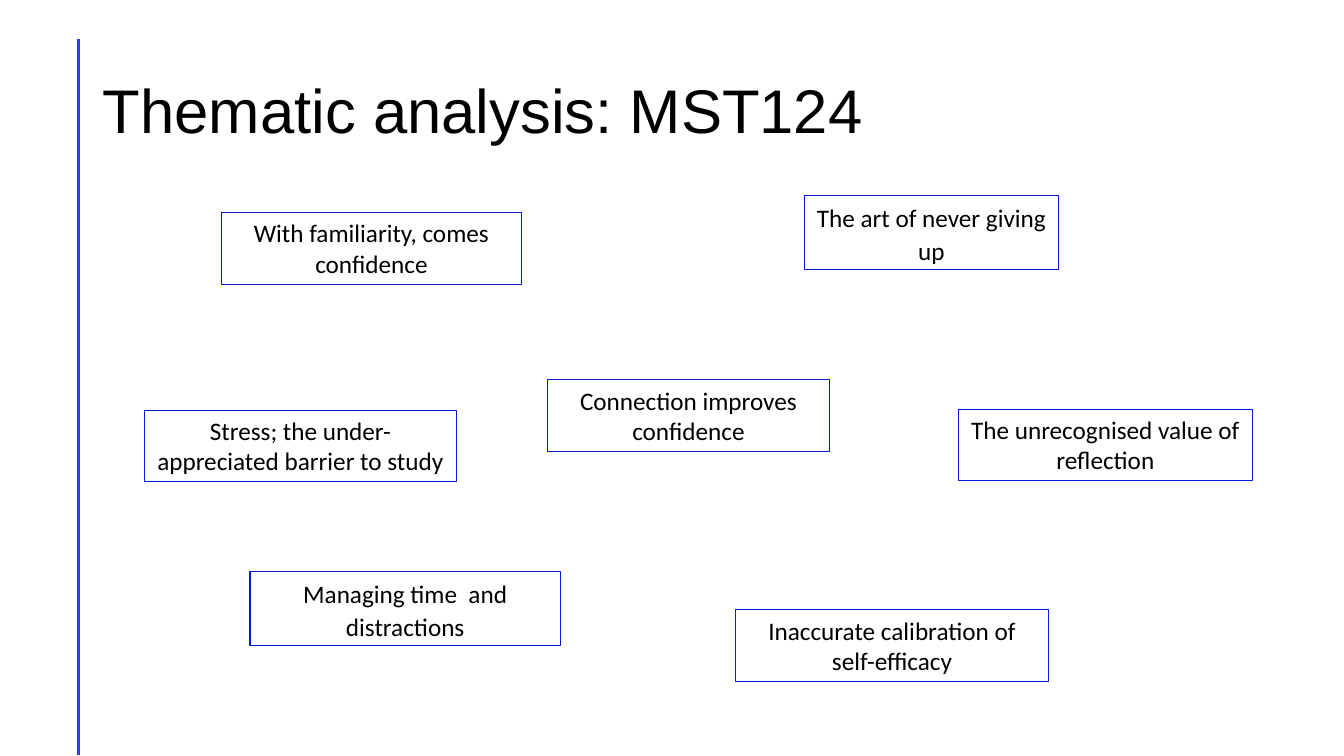
from lxml import etree
from pptx import Presentation
from pptx.dml.color import RGBColor
from pptx.enum.shapes import MSO_CONNECTOR, MSO_SHAPE
from pptx.enum.text import MSO_ANCHOR, MSO_AUTO_SIZE, PP_ALIGN
from pptx.oxml.ns import qn
from pptx.util import Inches, Pt

RECT = MSO_SHAPE.RECTANGLE
STRAIGHT = MSO_CONNECTOR.STRAIGHT
TOP, MIDDLE = MSO_ANCHOR.TOP, MSO_ANCHOR.MIDDLE
LEFT, CENTER = PP_ALIGN.LEFT, PP_ALIGN.CENTER
GROW, FIXED = MSO_AUTO_SIZE.SHAPE_TO_FIT_TEXT, MSO_AUTO_SIZE.NONE

BLACK = RGBColor(0x00, 0x00, 0x00)
BLUE = RGBColor(0x00, 0x1B, 0xDA)
RULE = RGBColor(0x2A, 0x40, 0xE2)

WIDTH, HEIGHT = Inches(13.33), Inches(7.5)
TIGHT, TALL = 9.47, 9.73

THEMES = [
    ("With familiarity, comes confidence", 16.5, 28.13, 22.28, False),
    ("Stress; the under-appreciated barrier to study", 10.73, 54.27, 23.25, False),
    ("Inaccurate calibration of self-efficacy", 54.75, 80.67, 23.25, False),
    ("The unrecognised value of reflection", 71.33, 54.13, 21.83, False),
    ("Connection improves confidence", 40.73, 50.27, 21, False),
    ("Managing time  and distractions", 18.6, 75.6, 23.1, True),
    ("The art of never giving up", 59.85, 25.87, 18.9, True),
]


def across(share):
    return round(WIDTH * share / 100)


def down(share):
    return round(HEIGHT * share / 100)


def style(para, name, size, align):
    para.alignment = align
    para.font.name = name
    para.font.size = Pt(size)
    para.font.color.rgb = BLACK


def add_rule(slide, left, top, bottom):
    line = slide.shapes.add_connector(
        STRAIGHT, across(left), down(top), across(left), down(bottom))
    line.line.color.rgb = RULE
    line.line.width = Pt(2)
    etree.SubElement(line._element.spPr, qn("a:effectLst"))


def set_title(slide, text):
    title = slide.shapes.title
    title.left, title.top = across(6.9), down(5.33)
    title.width, title.height = across(86.25), down(19.33)
    frame = title.text_frame
    frame.text = text
    frame.word_wrap = True
    frame.auto_size = FIXED
    frame.vertical_anchor = MIDDLE
    para = frame.paragraphs[0]
    para.line_spacing = 0.9
    style(para, "Arial", 44, LEFT)


def add_theme(slide, text, left, top, width, loose):
    height = TALL if loose else TIGHT
    box = slide.shapes.add_shape(
        RECT, across(left), down(top), across(width), down(height))
    box.shadow.inherit = False
    box.fill.background()
    box.line.color.rgb = BLUE
    box.line.width = Pt(0.75)
    frame = box.text_frame
    frame.text = text
    frame.word_wrap = True
    frame.auto_size = GROW
    frame.vertical_anchor = TOP
    para = frame.paragraphs[0]
    if loose:
        para.line_spacing = 1.07
        para.space_after = Pt(8)
    style(para, "Calibri", 18, CENTER)


def main():
    deck = Presentation()
    deck.slide_width, deck.slide_height = WIDTH, HEIGHT
    slide = deck.slides.add_slide(deck.slide_layouts[5])
    add_rule(slide, 5.85, 5.2, 99.87)
    set_title(slide, "Thematic analysis: MST124")
    for theme in THEMES:
        add_theme(slide, *theme)
    deck.save("out.pptx")


if __name__ == "__main__":
    main()
